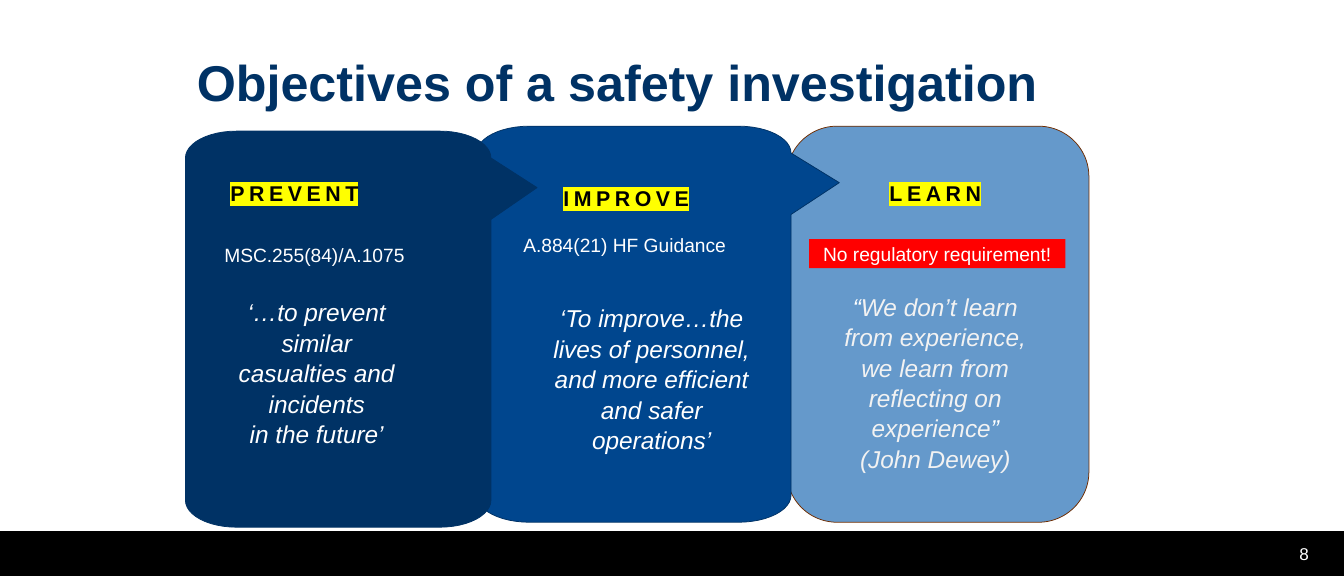
"""Build the slide on the objectives of a safety investigation."""
import math

import pptx
import pptx.util
import pptx.dml.color
import pptx.enum.shapes
import pptx.enum.text
from lxml import etree

Inches = pptx.util.Inches
Pt = pptx.util.Pt
KINDS = pptx.enum.shapes.MSO_SHAPE
ALIGN = pptx.enum.text.PP_ALIGN
ANCHOR = pptx.enum.text.MSO_ANCHOR
NS = "http://schemas.openxmlformats.org/drawingml/2006/main"
NAVY, BLUE, SKY = "003265", "00468E", "6599CB"
WHITE, PALE, BLACK, RED = "FFFFFF", "F2F2F2", "000000", "FF0000"
LABEL = dict(size=28, color=BLACK, bold=True, gap=6, mark="FFFF00")
QUOTE = dict(size=32, italic=True, align=ALIGN.CENTER, space=1.04)


def rgb(code):
    return pptx.dml.color.RGBColor.from_string(code)


def write(frame, lines, size=25.2, color=WHITE, bold=False, italic=False,
          align=ALIGN.LEFT, space=None, gap=0, mark=None):
    frame.word_wrap = True
    for num, line in enumerate(lines):
        para = frame.paragraphs[0] if num == 0 else frame.add_paragraph()
        para.alignment = align
        if space:
            para.line_spacing = space
        for part in line if isinstance(line, list) else [(line, color)]:
            run = para.add_run()
            run.text, tint = part
            font = run.font
            font.size, font.bold, font.italic = Pt(size), bold, italic
            font.color.rgb = rgb(tint)
            font.name = "Arial"
            props = run._r.get_or_add_rPr()
            if gap:
                props.set("spc", str(gap * 100))
            if mark:
                glow = etree.Element(f"{{{NS}}}highlight")
                etree.SubElement(glow, f"{{{NS}}}srgbClr", val=mark)
                props.find(f"{{{NS}}}solidFill").addnext(glow)


def curve(x, y, rx, ry, start, steps=12):
    turns = [math.radians(start + 90 * i / steps) for i in range(steps + 1)]
    return [(x + rx * math.cos(t), y + ry * math.sin(t)) for t in turns]


class Page:
    def __init__(self, deck):
        self.slide = deck.slides.add_slide(deck.slide_layouts[6])
        self.shapes = self.slide.shapes

    def paint(self, shape, fill, line=None):
        shape.shadow.inherit = False
        shape.fill.solid()
        shape.fill.fore_color.rgb = rgb(fill)
        if line:
            shape.line.color.rgb = rgb(line)
            shape.line.width = Pt(1)
        else:
            shape.line.fill.background()
        return shape

    def block(self, kind, box, fill, line=None):
        shape = self.shapes.add_shape(kind, *map(Inches, box))
        return self.paint(shape, fill, line)

    def text(self, box, *lines, anchor=ANCHOR.TOP, **style):
        frame = self.shapes.add_textbox(*map(Inches, box)).text_frame
        frame.vertical_anchor = anchor
        write(frame, lines, **style)

    def card(self, left, top, right, tip, rx, fill, ry=0.49, high=7.22):
        low = top + high
        points = curve(right - rx, top + ry, rx, ry, 270)
        points += [(tip, top + 1.03), (right, top + 1.61)]
        points += curve(right - rx, low - ry, rx, ry, 0)
        points += curve(left + rx, low - ry, rx, ry, 90)
        points += curve(left + rx, top + ry, rx, ry, 180)
        spots = [(Inches(x), Inches(y)) for x, y in points]
        form = self.shapes.build_freeform(*spots[0])
        form.add_line_segments(spots[1:], close=True)
        self.paint(form.convert_to_shape(), fill, NAVY)


def main():
    deck = pptx.Presentation()
    deck.slide_width, deck.slide_height = Inches(24.5), Inches(10.5)
    page = Page(deck)

    page.block(KINDS.RECTANGLE, (0, 9.68, 24.5, 0.82), BLACK)
    page.block(KINDS.ROUNDED_RECTANGLE, (14.34, 2.3, 5.51, 7.22), SKY, "6F2C00")
    page.text((18.45, 9.87, 5.51, 0.45), "8", size=22.4,
              align=ALIGN.RIGHT, anchor=ANCHOR.MIDDLE)
    page.text((3.49, 0.89, 15.71, 1.21), "Objectives of a safety investigation",
              size=66, color=NAVY, bold=True)
    page.card(8.69, 2.3, 14.42, 15.3, 0.96, BLUE)
    page.card(3.38, 2.39, 8.95, 9.79, 0.93, NAVY)

    page.text((4.1, 3.24, 3.58, 0.57), "PREVENT", **LABEL)
    page.text((10.17, 3.32, 3.21, 0.57), "IMPROVE", **LABEL)
    page.text((15.45, 3.23, 3.2, 0.57), "LEARN", align=ALIGN.CENTER, **LABEL)

    page.text((3.99, 4.38, 3.58, 0.53), "MSC.255(84)/A.1075")
    page.text((9.44, 4.21, 4.09, 0.53), "A.884(21) HF Guidance")
    alert = page.block(KINDS.RECTANGLE, (14.75, 4.36, 4.67, 0.53), RED)
    write(alert.text_frame, ["No regulatory requirement!"], align=ALIGN.CENTER)

    page.text((3.76, 5.35, 4.03, 2.79), "‘…to prevent similar",
              "casualties and incidents", "in the future’", **QUOTE)
    page.text((9.94, 5.46, 3.88, 2.79),
              "‘To improve…the lives of personnel, "
              "and more efficient and safer operations’", **QUOTE)
    page.text((15.18, 5.25, 3.74, 3.33),
              [("“", WHITE),
               ("We don’t learn from experience, "
                "we learn from reflecting on experience", PALE),
               ("”", WHITE)],
              [("(John Dewey)", PALE)], **QUOTE)
    deck.save("out.pptx")


if __name__ == "__main__":
    main()
